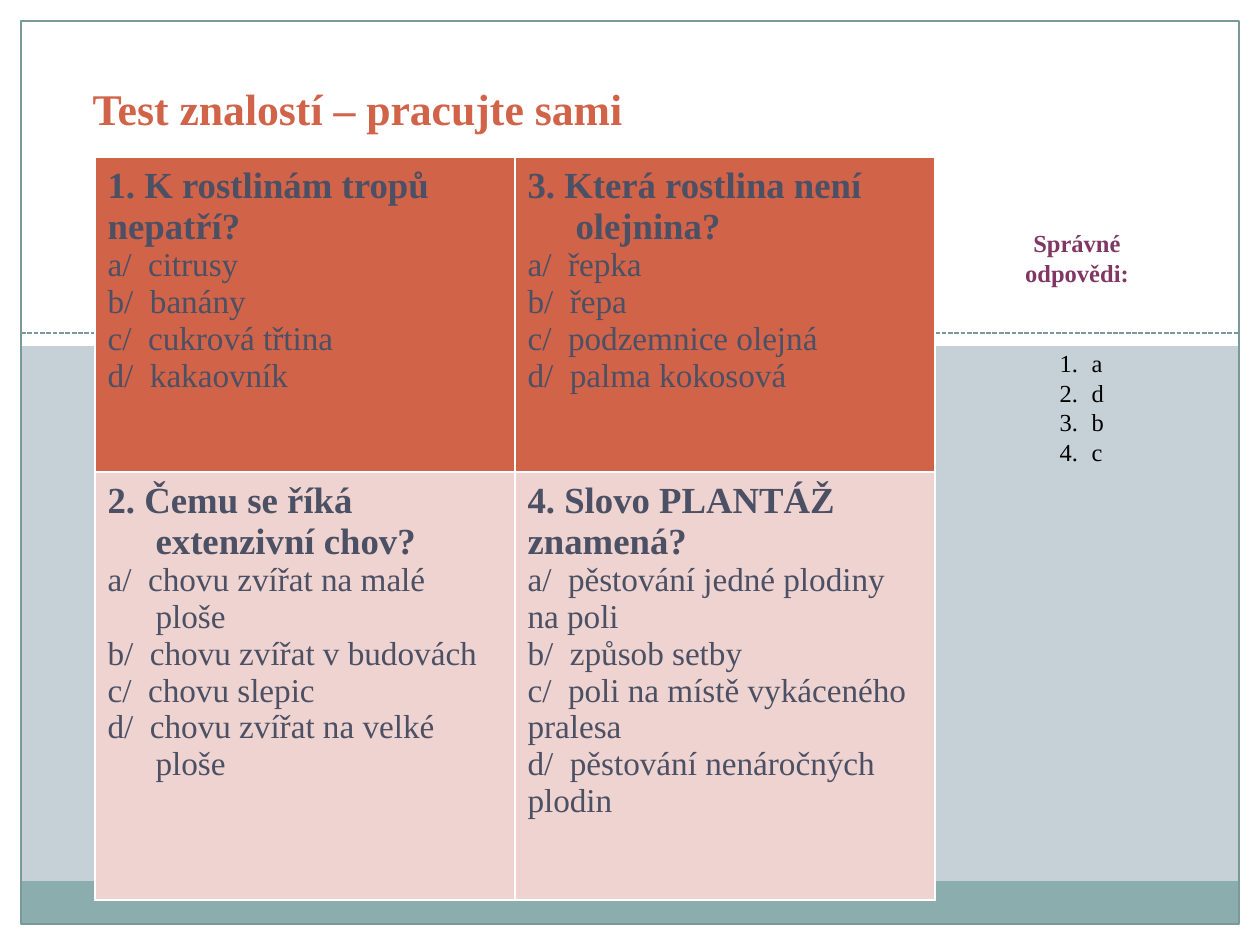
import pptx
import pptx.dml.color
import pptx.enum.dml
import pptx.enum.shapes
import pptx.enum.text
import pptx.oxml.ns
import pptx.util
import lxml.etree

RGBColor = pptx.dml.color.RGBColor
ALIGN = pptx.enum.text.PP_ALIGN
ANCHOR = pptx.enum.text.MSO_ANCHOR
SHAPE = pptx.enum.shapes.MSO_SHAPE
qn = pptx.oxml.ns.qn

WHITE = RGBColor(0xFF, 0xFF, 0xFF)
BLACK = RGBColor(0x00, 0x00, 0x00)
BACKGROUND = RGBColor(0xC5, 0xD1, 0xD7)
BAND = RGBColor(0x8C, 0xAD, 0xAE)
FRAME = RGBColor(0x7C, 0x99, 0x9A)
ORANGE = RGBColor(0xD1, 0x63, 0x49)
PINK = RGBColor(0xEE, 0xD3, 0xD0)
PURPLE = RGBColor(0x81, 0x37, 0x63)
SLATE = RGBColor(0x4B, 0x50, 0x64)
FONT = "Times New Roman"

TITLE = "Test znalostí – pracujte sami"
ANSWER_HEADING = "Správné odpovědi:"
ANSWERS = ["a", "d", "b", "c"]
QUESTIONS = [
    [
        {"question": "1. K rostlinám tropů nepatří?", "question_hang": 0, "option_hang": 48,
         "options": ["a/  citrusy", "b/  banány", "c/  cukrová třtina", "d/  kakaovník"]},
        {"question": "3. Která rostlina není olejnina?", "question_hang": 48, "option_hang": 48,
         "options": ["a/  řepka", "b/  řepa", "c/  podzemnice olejná", "d/  palma kokosová"]},
    ],
    [
        {"question": "2. Čemu se říká extenzivní chov?", "question_hang": 48, "option_hang": 48,
         "options": ["a/  chovu zvířat na malé ploše", "b/  chovu zvířat v budovách",
                     "c/  chovu slepic", "d/  chovu zvířat na velké ploše"]},
        {"question": "4. Slovo PLANTÁŽ znamená?", "question_hang": 0, "option_hang": 0,
         "options": ["a/  pěstování jedné plodiny na poli", "b/  způsob setby",
                     "c/  poli na místě vykáceného pralesa", "d/  pěstování nenáročných plodin"]},
    ],
]
ROW_FILLS = [ORANGE, PINK]
ROW_HEIGHTS = [315, 428]
COLUMN_WIDTH = 420

WIDTH, HEIGHT, MARGIN = 1260, 945, 21
WHITE_AREAS = [
    (0, HEIGHT - MARGIN, WIDTH, MARGIN),
    (WIDTH - MARGIN, 0, MARGIN, HEIGHT),
    (0, 0, MARGIN, HEIGHT),
    (0, 0, WIDTH, 346),
]


def px(length):
    return pptx.util.Emu(round(length * 914400 / 126))


def place(box, left, top, width, height):
    box.left, box.top, box.width, box.height = map(px, (left, top, width, height))


def write(frame, text, size=14, color=BLACK, bold=False, align=ALIGN.LEFT,
          hang=0, numbered=False, first=False):
    para = frame.paragraphs[0] if first else frame.add_paragraph()
    para.alignment = align
    para.space_before = pptx.util.Pt(0)
    properties = para._p.get_or_add_pPr()
    properties.set("marL", str(px(hang)))
    properties.set("indent", str(-px(hang)))
    if numbered:
        lxml.etree.SubElement(properties, qn("a:buFont"), typeface="+mj-lt")
        lxml.etree.SubElement(properties, qn("a:buAutoNum"), type="arabicPeriod")
    span = para.add_run()
    span.text = text
    span.font.name = FONT
    span.font.size = pptx.util.Pt(size)
    span.font.bold = bold
    span.font.color.rgb = color


def add_rectangle(page, area, fill=None, line=None):
    box = page.shapes.add_shape(SHAPE.RECTANGLE, *map(px, area))
    box.shadow.inherit = False
    if fill is None:
        box.fill.background()
    else:
        box.fill.solid()
        box.fill.fore_color.rgb = fill
    if line is None:
        box.line.fill.background()
    else:
        box.line.color.rgb = line
        box.line.width = pptx.util.Pt(0.75)


def add_divider(page, y):
    line = page.shapes.add_connector(pptx.enum.shapes.MSO_CONNECTOR.STRAIGHT,
                                     px(MARGIN), px(y), px(WIDTH - MARGIN), px(y))
    line.line.color.rgb = FRAME
    line.line.width = pptx.util.Pt(0.9)
    line.line.dash_style = pptx.enum.dml.MSO_LINE.SQUARE_DOT
    lxml.etree.SubElement(line._element.spPr, qn("a:effectLst"))


def style_cell(cell, fill):
    properties = cell._tc.get_or_add_tcPr()
    for side in ("a:lnL", "a:lnR", "a:lnT", "a:lnB"):
        border = lxml.etree.SubElement(properties, qn(side), w="12700")
        paint = lxml.etree.SubElement(border, qn("a:solidFill"))
        lxml.etree.SubElement(paint, qn("a:srgbClr"), val=str(WHITE))
    cell.fill.solid()
    cell.fill.fore_color.rgb = fill
    cell.margin_left = cell.margin_right = pptx.util.Inches(0.1)
    cell.margin_top = cell.margin_bottom = pptx.util.Inches(0.07)


def add_questions(page, left, top):
    rows, columns = len(QUESTIONS), len(QUESTIONS[0])
    table = page.shapes.add_table(rows, columns, px(left), px(top),
                                  px(COLUMN_WIDTH * columns), px(sum(ROW_HEIGHTS))).table
    for column in table.columns:
        column.width = px(COLUMN_WIDTH)
    for r, entries in enumerate(QUESTIONS):
        table.rows[r].height = px(ROW_HEIGHTS[r])
        for c, entry in enumerate(entries):
            cell = table.cell(r, c)
            style_cell(cell, ROW_FILLS[r])
            write(cell.text_frame, entry["question"], size=21, color=SLATE, bold=True,
                  hang=entry["question_hang"], first=True)
            for option in entry["options"]:
                write(cell.text_frame, option, size=19, color=SLATE, hang=entry["option_hang"])


def main():
    deck = pptx.Presentation()
    deck.slide_width, deck.slide_height = px(WIDTH), px(HEIGHT)
    page = deck.slides.add_slide(deck.slide_layouts[1])
    page.background.fill.solid()
    page.background.fill.fore_color.rgb = BACKGROUND
    title, answers = page.shapes.title, page.placeholders[1]

    for area in WHITE_AREAS:
        add_rectangle(page, area, fill=WHITE)
    add_rectangle(page, (MARGIN, 881, WIDTH - 2 * MARGIN, 43), fill=BAND)
    add_divider(page, 333)
    add_rectangle(page, (MARGIN, MARGIN, WIDTH - 2 * MARGIN, HEIGHT - 2 * MARGIN), line=FRAME)
    add_questions(page, 95, 157)

    heading = page.shapes.add_textbox(px(978), px(222), px(198), px(72))
    heading.text_frame.word_wrap = True
    write(heading.text_frame, ANSWER_HEADING, color=PURPLE, bold=True,
          align=ALIGN.CENTER, first=True)

    place(title, 32, 32, 651, 109)
    title.text_frame.vertical_anchor = ANCHOR.BOTTOM
    write(title.text_frame, TITLE, size=25, color=ORANGE, bold=True,
          align=ALIGN.CENTER, first=True)

    place(answers, 1047, 342, 69, 156)
    answers.text_frame.vertical_anchor = ANCHOR.TOP
    for i, answer in enumerate(ANSWERS):
        write(answers.text_frame, answer, hang=32, numbered=True, first=i == 0)

    for box in (title, answers):
        box.text_frame.auto_size = pptx.enum.text.MSO_AUTO_SIZE.NONE
        page.shapes._spTree.append(box._element)

    deck.save("out.pptx")


if __name__ == "__main__":
    main()
